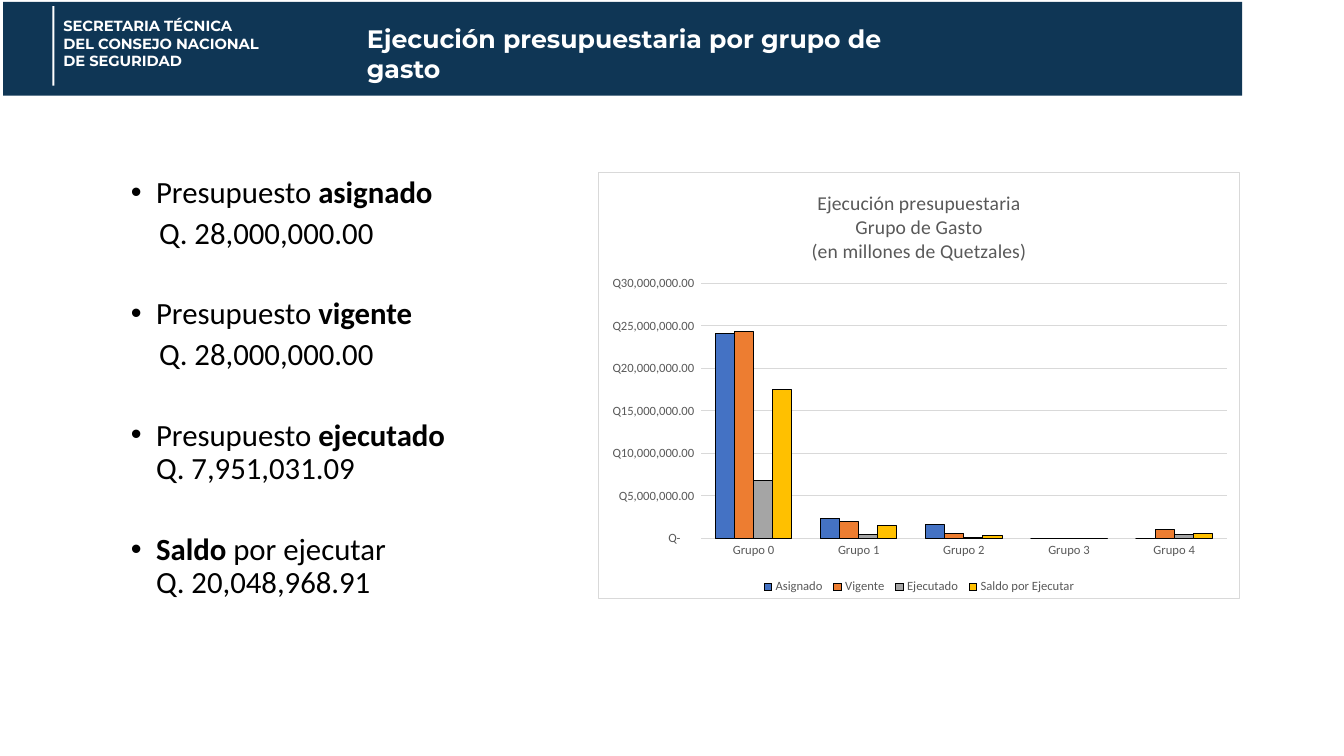
"""Slide showing budget execution by spending group, with key totals and a column chart."""
from dataclasses import dataclass

from lxml import etree
from pptx import Presentation
from pptx.chart.data import CategoryChartData
from pptx.dml.color import RGBColor as RGB
from pptx.enum.chart import XL_CHART_TYPE as Chart, XL_LEGEND_POSITION as Legend, XL_TICK_MARK as Tick
from pptx.enum.shapes import MSO_SHAPE as Shape
from pptx.oxml import parse_xml
from pptx.oxml.ns import nsdecls, qn
from pptx.util import Inches, Pt


@dataclass(frozen=True)
class Theme:
    navy: str = "0F3655"
    white: str = "FFFFFF"
    black: str = "000000"
    gray: str = "595959"
    rule: str = "D9D9D9"
    series: tuple = ("4472C4", "ED7D31", "A5A5A5", "FFC000")
    head_font: str = "Montserrat"
    body_font: str = "Calibri"
    office: float = 10.5
    title: float = 18
    body: float = 22
    chart_title: float = 14
    chart_label: float = 9


T = Theme()


def style(font, name, size, color, bold=False):
    font.name, font.size, font.bold = name, Pt(size), bold
    font.color.rgb = RGB.from_string(color)


def add_text(s, left, top, width, height):
    tf = s.shapes.add_textbox(Inches(left), Inches(top), Inches(width), Inches(height)).text_frame
    tf.word_wrap = True
    return tf


prs = Presentation()
prs.slide_width, prs.slide_height = Inches(13.33), Inches(7.5)
s = prs.slides.add_slide(prs.slide_layouts[6])

for left, top, width, height, color in ((0.03, 0.02, 12.29, 0.93, T.navy), (0.52, 0.06, 0.02, 0.79, T.white)):
    sp = s.shapes.add_shape(Shape.RECTANGLE, Inches(left), Inches(top), Inches(width), Inches(height))
    sp.shadow.inherit = False
    sp.fill.solid()
    sp.fill.fore_color.rgb = RGB.from_string(color)
    sp.line.fill.background()

headings = (
    (0.53, 0.12, 3.77, 0.63, T.office, "SECRETARIA TÉCNICA\nDEL CONSEJO NACIONAL\nDE SEGURIDAD"),
    (3.54, 0.18, 6.08, 0.71, T.title, "Ejecución presupuestaria por grupo de gasto"),
)
for left, top, width, height, size, text in headings:
    tf = add_text(s, left, top, width, height)
    tf.text = text
    for p in tf.paragraphs:
        style(p.runs[0].font, T.head_font, size, T.white, True)

totals = (
    ((("Presupuesto ", False), ("asignado", True)), "Q. 28,000,000.00", True),
    ((("Presupuesto ", False), ("vigente", True)), "Q. 28,000,000.00", True),
    ((("Presupuesto ", False), ("ejecutado", True)), "Q. 7,951,031.09", False),
    ((("Saldo", True), (" por ejecutar", False)), "Q. 20,048,968.91", False),
)
tf = add_text(s, 0.7, 1.71, 5.15, 5.05)
for i, (label, amount, own_paragraph) in enumerate(totals):
    p = tf.paragraphs[0] if i == 0 else tf.add_paragraph()
    p.line_spacing = 0.9
    p.space_before = Pt(34 if i else 0)
    pPr = p._p.get_or_add_pPr()
    pPr.set("marL", str(Inches(0.75)))
    pPr.set("indent", str(Inches(-0.25)))
    etree.SubElement(pPr, qn("a:buFont")).set("typeface", "Arial")
    etree.SubElement(pPr, qn("a:buChar")).set("char", "•")
    for text, bold in label:
        r = p.add_run()
        r.text = text
        style(r.font, T.body_font, T.body, T.black, bold)
    if own_paragraph:
        p = tf.add_paragraph()
        p.line_spacing = 0.9
        p.space_before = Pt(5)
        p._p.get_or_add_pPr().set("marL", str(Inches(0.78)))
    else:
        p.add_line_break()
    r = p.add_run()
    r.text = amount
    style(r.font, T.body_font, T.body, T.black)

data = CategoryChartData(number_format='"Q"#,##0.00')
data.categories = [f"Grupo {n}" for n in range(5)]
data.add_series("Asignado ", (24100000, 2400000, 1600000, 0, 0))
data.add_series("Vigente ", (24300000, 2000000, 600000, 0, 1100000))
data.add_series("Ejecutado ", (6800000, 500000, 100000, 0, 500000))
data.add_series("Saldo por Ejecutar", (17500000, 1500000, 400000, 0, 600000))
chart = s.shapes.add_chart(
    Chart.COLUMN_CLUSTERED, Inches(5.93), Inches(1.71), Inches(6.37), Inches(4.23), data).chart
style(chart.font, T.body_font, T.chart_label, T.gray)

chart.has_title = True
tf = chart.chart_title.text_frame
tf.text = "Ejecución presupuestaria\nGrupo de Gasto\n(en millones de Quetzales)"
for p in tf.paragraphs:
    style(p.runs[0].font, T.body_font, T.chart_title, T.gray)
chart.chart_title.include_in_layout = False

chart.has_legend = True
chart.legend.position = Legend.BOTTOM
chart.legend.include_in_layout = False
style(chart.legend.font, T.body_font, T.chart_label, T.gray)

plot = chart.plots[0]
plot.gap_width, plot.overlap, plot.vary_by_categories = 150, 0, False
for series, color in zip(plot.series, T.series):
    series.invert_if_negative = False
    series.format.fill.solid()
    series.format.fill.fore_color.rgb = RGB.from_string(color)
    series.format.line.color.rgb = RGB.from_string(T.black)
    series.format.line.width = Pt(0.75)

values = chart.value_axis
for axis in (chart.category_axis, values):
    axis.major_tick_mark = axis.minor_tick_mark = Tick.NONE
    axis.format.line.fill.background()
    style(axis.tick_labels.font, T.body_font, T.chart_label, T.gray)
values.minimum_scale, values.maximum_scale, values.major_unit = 0, 30000000, 5000000
values.tick_labels.number_format = r'_("Q"* #,##0.00_);_("Q"* \(#,##0.00\);_("Q"* "-"??_);_(@_)'
values.tick_labels.number_format_is_linked = False
grid = values.major_gridlines.format.line
grid.color.rgb, grid.width = RGB.from_string(T.rule), Pt(0.75)

plot_area = chart._chartSpace.chart.plotArea
for old in plot_area.findall(qn("c:layout")):
    plot_area.remove(old)
box = (("layoutTarget", "inner"), ("xMode", "edge"), ("yMode", "edge"),
       ("x", 0.16), ("y", 0.26), ("w", 0.82), ("h", 0.6))
items = "".join(f'<c:{tag} val="{val}"/>' for tag, val in box)
plot_area.insert(0, parse_xml(f'<c:layout {nsdecls("c")}><c:manualLayout>{items}</c:manualLayout></c:layout>'))
chart._chartSpace.chart.addnext(parse_xml(
    f'<c:spPr {nsdecls("c", "a")}><a:solidFill><a:srgbClr val="{T.white}"/></a:solidFill>'
    f'<a:ln w="{Pt(0.75)}"><a:solidFill><a:srgbClr val="{T.rule}"/></a:solidFill></a:ln></c:spPr>'))

prs.save("out.pptx")
